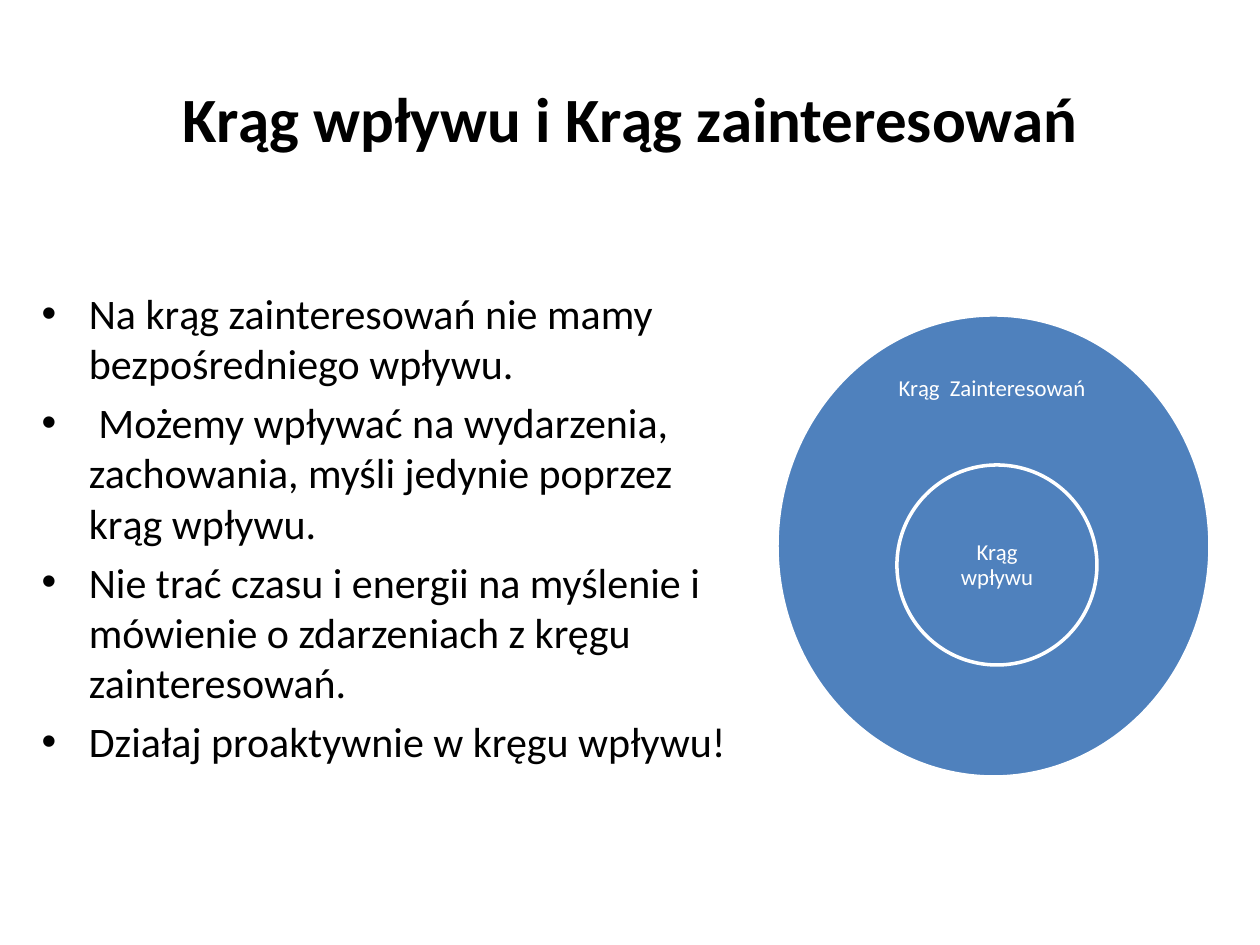
from pptx import Presentation
from pptx.dml.color import RGBColor
from pptx.enum.shapes import MSO_SHAPE
from pptx.enum.text import MSO_ANCHOR, PP_ALIGN
from pptx.util import Inches, Pt

OVAL = MSO_SHAPE.OVAL
MIDDLE = MSO_ANCHOR.MIDDLE
CENTER = PP_ALIGN.CENTER

BLACK = RGBColor(0x00, 0x00, 0x00)
WHITE = RGBColor(0xFF, 0xFF, 0xFF)
BLUE = RGBColor(0x4F, 0x81, 0xBD)
FONT = "Calibri"
SCALE = Inches(1) / 126

TITLE = "Krąg wpływu i Krąg zainteresowań"
POINTS = [
    "Na krąg zainteresowań nie mamy bezpośredniego wpływu.",
    " Możemy wpływać na wydarzenia, zachowania, myśli jedynie poprzez krąg wpływu.",
    "Nie trać czasu i energii na myślenie i mówienie o zdarzeniach z kręgu zainteresowań.",
    "Działaj proaktywnie w kręgu wpływu!",
]
RINGS = [
    ((777, 315, 433, 462), (881, 350, 227, 78), "Krąg  Zainteresowań "),
    ((897, 465, 200, 200), (926, 515, 142, 101), "Krąg wpływu"),
]


def emu(box):
    return [round(n * SCALE) for n in box]


def place(shape, box):
    shape.left, shape.top, shape.width, shape.height = emu(box)


def add_run(para, text, size, color, bold=False):
    run = para.add_run()
    run.text = text
    font = run.font
    font.name = FONT
    font.size = Pt(size)
    font.bold = bold
    font.color.rgb = color


def add_title(slide):
    title = slide.shapes.title
    place(title, (63, 38, 1134, 158))
    frame = title.text_frame
    frame.vertical_anchor = MIDDLE
    para = frame.paragraphs[0]
    para.alignment = CENTER
    add_run(para, TITLE, 36, BLACK, True)


def add_list(slide):
    body = slide.placeholders[1]
    place(body, (29, 281, 738, 605))
    frame = body.text_frame
    for i, text in enumerate(POINTS):
        para = frame.add_paragraph() if i else frame.paragraphs[0]
        add_run(para, text, 24, BLACK)


def add_ring(slide, box):
    ring = slide.shapes.add_shape(OVAL, *emu(box))
    ring.shadow.inherit = False
    ring.fill.solid()
    ring.fill.fore_color.rgb = BLUE
    ring.line.color.rgb = WHITE
    ring.line.width = Pt(2)


def add_label(slide, box, text):
    frame = slide.shapes.add_textbox(*emu(box)).text_frame
    frame.word_wrap = True
    frame.vertical_anchor = MIDDLE
    frame.margin_left = frame.margin_right = Inches(0.1)
    frame.margin_top = frame.margin_bottom = Inches(0.1)
    para = frame.paragraphs[0]
    para.alignment = CENTER
    para.line_spacing = 0.9
    add_run(para, text, 13, WHITE)


def main():
    deck = Presentation()
    deck.slide_width = Inches(10)
    deck.slide_height = Inches(7.5)
    slide = deck.slides.add_slide(deck.slide_layouts[1])
    add_title(slide)
    add_list(slide)
    for ring, label, text in RINGS:
        add_ring(slide, ring)
        add_label(slide, label, text)
    deck.save("out.pptx")


if __name__ == "__main__":
    main()
